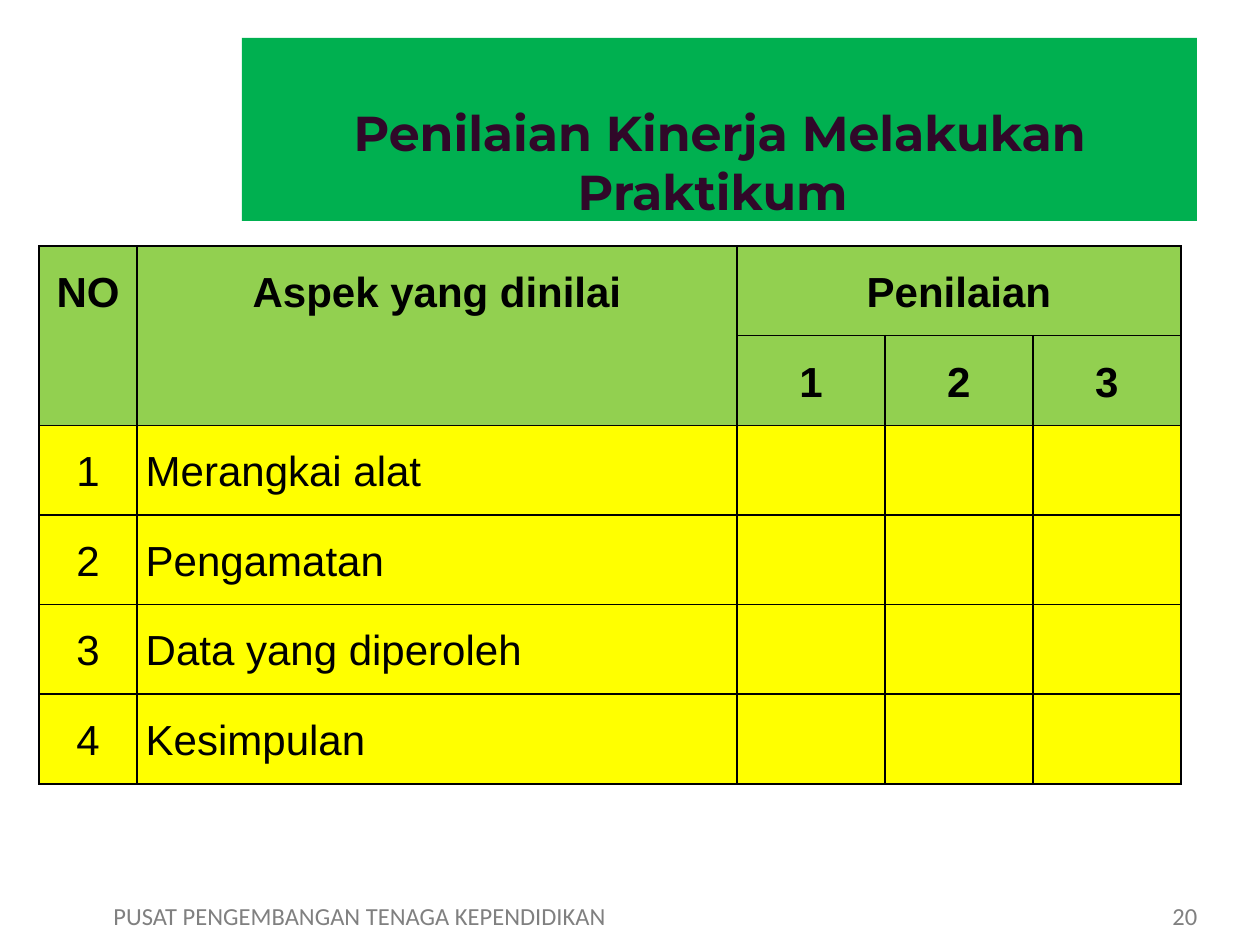
from dataclasses import dataclass

from lxml import etree
from pptx import Presentation, util as u
from pptx.dml.color import RGBColor
from pptx.enum import shapes, text
from pptx.oxml.ns import qn

PX = 914400 // 126


@dataclass(frozen=True)
class Theme:
    banner: str = "00B050"
    title: str = "300829"
    header: str = "92D050"
    body: str = "FFFF00"
    ink: str = "000000"
    footer: str = "808080"
    title_font: str = "Montserrat"
    table_font: str = "Arial"
    footer_font: str = "Calibri"
    title_size: int = 28
    table_size: int = 24
    footer_size: int = 14


THEME = Theme()


def scaled(*lengths):
    return [u.Emu(length * PX) for length in lengths]


def style(paragraph, name, size, color, bold=False):
    font = paragraph.font
    font.name, font.size, font.bold = name, u.Pt(size), bold
    font.color.rgb = RGBColor.from_string(color)


def fill_solid(target, color):
    target.fill.solid()
    target.fill.fore_color.rgb = RGBColor.from_string(color)


def add_banner(slide, box, title):
    banner = slide.shapes.add_shape(shapes.MSO_SHAPE.RECTANGLE, *scaled(*box))
    banner.shadow.inherit = False
    fill_solid(banner, THEME.banner)
    banner.line.fill.background()
    frame = banner.text_frame
    frame.word_wrap = True
    frame.vertical_anchor = text.MSO_ANCHOR.BOTTOM
    frame.margin_bottom = u.Emu(PX)
    paragraph = frame.paragraphs[0]
    paragraph.text = title
    paragraph.alignment = text.PP_ALIGN.CENTER
    style(paragraph, THEME.title_font, THEME.title_size, THEME.title, True)


def add_borders(cell):
    properties = cell._tc.get_or_add_tcPr()
    for index, side in enumerate(("lnL", "lnR", "lnT", "lnB")):
        line = etree.Element(qn(f"a:{side}"), w=str(u.Pt(1)))
        solid = etree.SubElement(line, qn("a:solidFill"))
        etree.SubElement(solid, qn("a:srgbClr"), val=THEME.ink)
        properties.insert(index, line)


def write_cell(cell, value, alignment, bold):
    cell.text = value
    paragraph = cell.text_frame.paragraphs[0]
    paragraph.alignment = alignment
    paragraph.line_spacing = 1.5
    paragraph.space_after = u.Pt(6)
    style(paragraph, THEME.table_font, THEME.table_size, THEME.ink, bold)


def add_assessment_table(slide, box, widths, rows, header_rows):
    frame = slide.shapes.add_table(len(rows), len(widths), *scaled(*box))
    table = frame.table
    for column, width in zip(table.columns, scaled(*widths)):
        column.width = width
    for row in table.rows:
        row.height = u.Emu(box[3] * PX // len(rows))
    for row_index, values in enumerate(rows):
        is_header = row_index < header_rows
        for column_index, value in enumerate(values):
            cell = table.cell(row_index, column_index)
            cell.margin_left = cell.margin_right = u.Inches(0.07)
            cell.margin_top = cell.margin_bottom = 0
            fill_solid(cell, THEME.header if is_header else THEME.body)
            add_borders(cell)
            if value:
                justified = column_index == 1 and not is_header
                alignment = text.PP_ALIGN.JUSTIFY if justified else text.PP_ALIGN.CENTER
                write_cell(cell, value, alignment, is_header)
    for column_index in (0, 1):
        table.cell(0, column_index).merge(table.cell(header_rows - 1, column_index))
    table.cell(0, 2).merge(table.cell(0, len(widths) - 1))


def add_footer(slide, box, label):
    frame = slide.shapes.add_textbox(*scaled(*box)).text_frame
    frame.word_wrap = False
    paragraph = frame.paragraphs[0]
    paragraph.text = label
    style(paragraph, THEME.footer_font, THEME.footer_size, THEME.footer)


def main():
    presentation = Presentation()
    presentation.slide_width, presentation.slide_height = u.Inches(10), u.Inches(7.5)
    slide = presentation.slides.add_slide(presentation.slide_layouts[6])

    add_footer(slide, (101, 895, 522, 43), "PUSAT PENGEMBANGAN TENAGA KEPENDIDIKAN")
    add_footer(slide, (1160, 895, 54, 43), "20")
    add_banner(slide, (242, 38, 955, 183), "Penilaian Kinerja Melakukan Praktikum ")

    aspects = ["Merangkai alat", "Pengamatan", "Data yang diperoleh", "Kesimpulan"]
    rows = [
        ["NO", "Aspek yang dinilai", "Penilaian", "", ""],
        ["", "", "1", "2", "3"],
        *([str(number), aspect, "", "", ""] for number, aspect in enumerate(aspects, 1)),
    ]
    widths = [98, 600] + [148] * 3
    add_assessment_table(slide, (39, 246, sum(widths), 538), widths, rows, header_rows=2)
    presentation.save("out.pptx")


if __name__ == "__main__":
    main()
